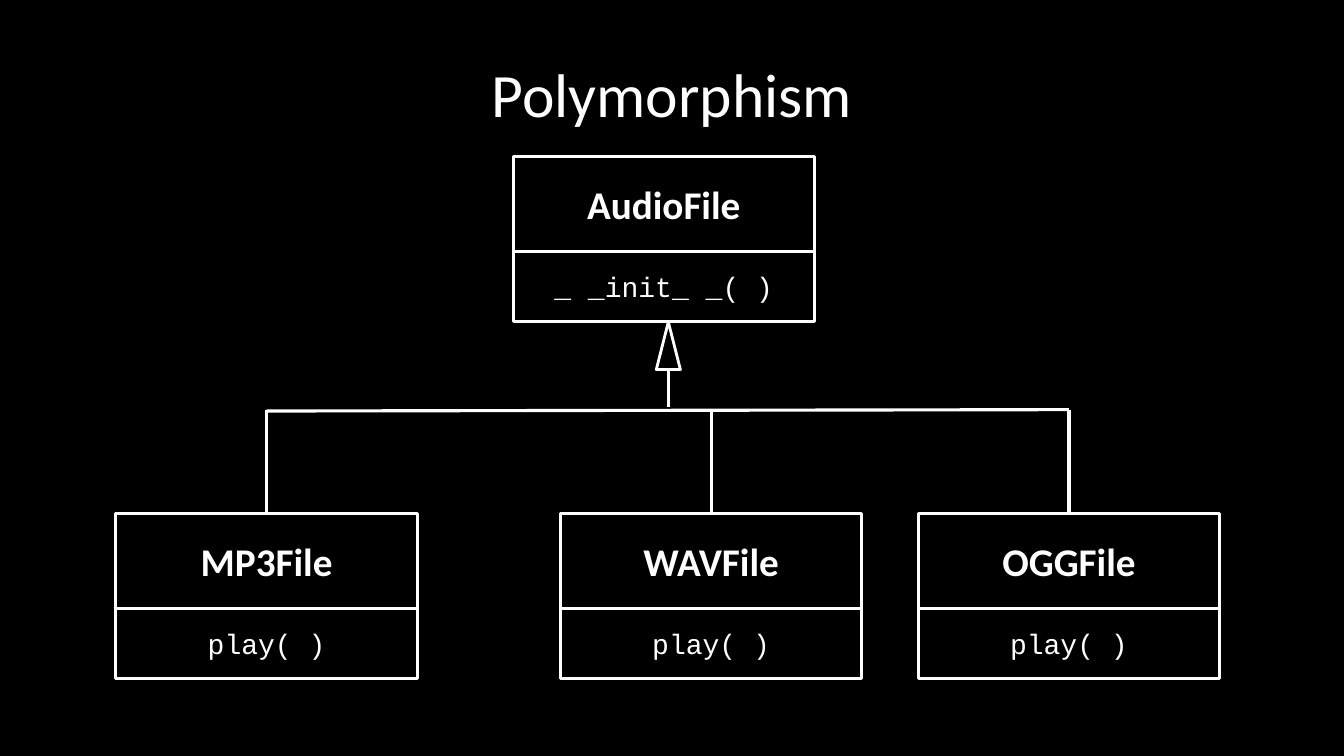
"""Build a slide with a class diagram that explains polymorphism."""
from lxml import etree
from pptx import Presentation
from pptx.dml.color import RGBColor
from pptx.enum.shapes import MSO_CONNECTOR, MSO_SHAPE
from pptx.enum.text import MSO_ANCHOR, PP_ALIGN
from pptx.oxml.ns import qn
from pptx.util import Pt

RECTANGLE = MSO_SHAPE.RECTANGLE
TRIANGLE = MSO_SHAPE.ISOSCELES_TRIANGLE
STRAIGHT = MSO_CONNECTOR.STRAIGHT
MIDDLE = MSO_ANCHOR.MIDDLE
CENTER = PP_ALIGN.CENTER

TITLE = "Polymorphism"
PARENT = ("AudioFile", "_ _init_ _( )", 366.5, 111.6)
CHILD_TOP = 366.5
CHILDREN = [
    ("MP3File", "play( )", 82.8, CHILD_TOP),
    ("WAVFile", "play( )", 400.3, CHILD_TOP),
    ("OGGFile", "play( )", 655.9, CHILD_TOP),
]

COLORS = {"background": "000000", "ink": "FFFFFF"}
HEADING_FONT, CODE_FONT = "Calibri", "Courier New"
CLASS_WIDTH, NAME_HEIGHT, METHOD_HEIGHT = 215.3, 68, 50.4
ARROW_CENTER, ARROW_WIDTH, ARROW_HEIGHT = 477.4, 17.2, 34
STEM_BOTTOM, BRANCH_TOP, BRANCH_LEFT_TOP = 291, 292.6, 293.6
LINE_WIDTH, ARROW_LINE_WIDTH = 2.25, 2


def color(name):
    """Return a named colour."""
    return RGBColor.from_string(COLORS[name])


def write(box, text, font, size, bold=False):
    """Put centred text in a shape."""
    frame = box.text_frame
    frame.word_wrap = True
    frame.vertical_anchor = MIDDLE
    para = frame.paragraphs[0]
    para.alignment = CENTER
    span = para.add_run()
    span.text = text
    span.font.name = font
    span.font.size = Pt(size)
    span.font.bold = bold
    span.font.color.rgb = color("ink")


def add_outline(page, kind, left, top, width, height, line_width=LINE_WIDTH):
    """Add an unfilled shape."""
    box = page.shapes.add_shape(kind, Pt(left), Pt(top), Pt(width), Pt(height))
    box.shadow.inherit = False
    box.fill.background()
    box.line.color.rgb = color("ink")
    box.line.width = Pt(line_width)
    return box


def add_line(page, start, end):
    """Add a straight line between two points."""
    line = page.shapes.add_connector(STRAIGHT, *map(Pt, start + end))
    line.line.color.rgb = color("ink")
    line.line.width = Pt(LINE_WIDTH)
    etree.SubElement(line._element.spPr, qn("a:effectLst"))


def add_class(page, name, method, left, top):
    """Add a class with its name above its method."""
    name_box = add_outline(page, RECTANGLE, left, top, CLASS_WIDTH, NAME_HEIGHT)
    write(name_box, name, HEADING_FONT, 28, bold=True)
    method_box = add_outline(page, RECTANGLE, left, top + NAME_HEIGHT, CLASS_WIDTH, METHOD_HEIGHT)
    write(method_box, method, CODE_FONT, 20)


def main():
    """Draw the slide and save it."""
    deck = Presentation()
    deck.slide_width, deck.slide_height = Pt(960), Pt(540)
    page = deck.slides.add_slide(deck.slide_layouts[5])
    page.background.fill.solid()
    page.background.fill.fore_color.rgb = color("background")

    title = page.shapes.title
    title.left, title.top, title.width, title.height = Pt(48), Pt(21.6), Pt(864), Pt(90)
    write(title, TITLE, HEADING_FONT, 44)

    add_class(page, *PARENT)
    arrow_top = PARENT[3] + NAME_HEIGHT + METHOD_HEIGHT
    add_outline(page, TRIANGLE, ARROW_CENTER - ARROW_WIDTH / 2, arrow_top,
                ARROW_WIDTH, ARROW_HEIGHT, ARROW_LINE_WIDTH)
    add_line(page, (ARROW_CENTER, arrow_top + ARROW_HEIGHT), (ARROW_CENTER, STEM_BOTTOM))

    centers = [left + CLASS_WIDTH / 2 for _, _, left, _ in CHILDREN]
    add_line(page, (centers[0], BRANCH_LEFT_TOP), (centers[-1], BRANCH_TOP))
    for child, center in zip(CHILDREN, centers):
        add_class(page, *child)
        add_line(page, (center, BRANCH_TOP), (center, CHILD_TOP))

    deck.save("out.pptx")


if __name__ == "__main__":
    main()
